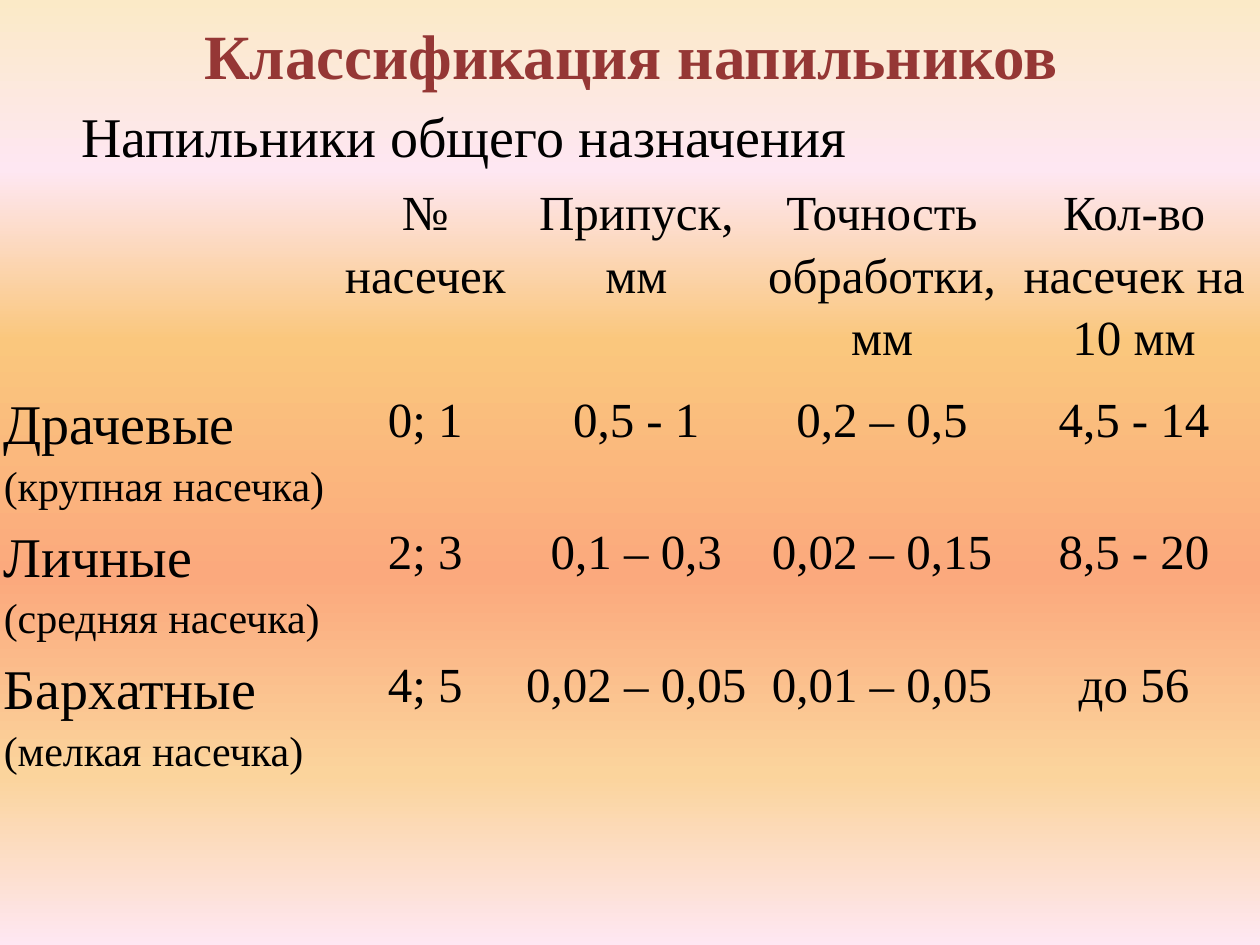
from dataclasses import dataclass

import pptx
import pptx.dml.color
import pptx.enum.text
import pptx.oxml
import pptx.oxml.ns
import pptx.util

Inches = pptx.util.Inches
ALIGN = pptx.enum.text.PP_ALIGN
ANCHOR = pptx.enum.text.MSO_ANCHOR


@dataclass(frozen=True)
class Theme:
    font: str = "Times New Roman"
    title_color: str = "953735"
    text_color: str = "000000"
    title_size: int = 36
    heading_size: int = 32
    body_size: int = 28
    note_size: int = 24
    line_spacing: float = 1.15
    # Background stops: position in percent, colour
    background: tuple = (
        (0, "FBEAC7"), (18, "FEE7F2"), (36, "FAC77D"),
        (61, "FBA97D"), (82, "FBD49C"), (100, "FEE7F2"),
    )


@dataclass(frozen=True)
class FileClass:
    name: str
    note: str
    values: tuple[str, ...]


THEME = Theme()
COLUMN_WIDTHS = (2.65, 1.45, 1.9, 2, 2)
HEADER_HEIGHT, ROW_HEIGHT = 1.64, 1.05
CELL_INSET = 0.03
NO_STYLE_NO_GRID = "{2D5ABB26-0587-4C30-8999-92F81FD0307C}"

# Each header is a tuple of paragraphs
HEADERS = (
    ("№ насечек",),
    ("Припуск,", "мм"),
    ("Точность обработки, мм",),
    ("Кол-во насечек на 10 мм",),
)
FILE_CLASSES = (
    FileClass("Драчевые", "(крупная насечка)",
              ("0; 1", "0,5 - 1", "0,2 – 0,5", "4,5 - 14")),
    FileClass("Личные", "(средняя насечка)",
              ("2; 3", "0,1 – 0,3", "0,02 – 0,15", "8,5 - 20")),
    FileClass("Бархатные", "(мелкая насечка)",
              ("4; 5", "0,02 – 0,05", "0,01 – 0,05", "до 56")),
)


def write_lines(tf, lines: tuple[tuple[str, int], ...], align=ALIGN.CENTER,
                color: str = THEME.text_color, bold: bool = False,
                spacing: float = 1.0) -> None:
    """Write one paragraph for each (text, size) pair."""
    for i, (text, size) in enumerate(lines):
        p = tf.paragraphs[0] if i == 0 else tf.add_paragraph()
        p.alignment = align
        p.line_spacing = spacing
        r = p.add_run()
        r.text = text
        r.font.name = THEME.font
        r.font.size = pptx.util.Pt(size)
        r.font.bold = bold
        r.font.color.rgb = pptx.dml.color.RGBColor.from_string(color)


def paint_background(s) -> None:
    fill = s.background.fill
    fill.gradient()
    fill.gradient_angle = 270
    stops = s.element.xpath(".//p:bg//a:gsLst")[0]
    for stop in list(stops):
        stops.remove(stop)
    for percent, color in THEME.background:
        stops.append(pptx.oxml.parse_xml(
            f'<a:gs {pptx.oxml.ns.nsdecls("a")} pos="{percent * 1000}">'
            f'<a:srgbClr val="{color}"/></a:gs>'))


def add_title(s, text: str) -> None:
    sp = s.shapes.title
    sp.left, sp.top = Inches(0.51), Inches(0.13)
    sp.width, sp.height = Inches(9), Inches(1.09)
    tf = sp.text_frame
    tf.vertical_anchor = ANCHOR.TOP
    tf.margin_top = 0
    write_lines(tf, ((text, THEME.title_size),),
                color=THEME.title_color, bold=True)


def add_subtitle(s, text: str) -> None:
    sp = s.shapes.add_textbox(Inches(0.43), Inches(0.76),
                              Inches(6.51), Inches(0.64))
    tf = sp.text_frame
    tf.word_wrap = False
    tf.auto_size = pptx.enum.text.MSO_AUTO_SIZE.SHAPE_TO_FIT_TEXT
    write_lines(tf, ((text, THEME.heading_size),))


def fill_cell(cell, lines: tuple[tuple[str, int], ...],
              align=ALIGN.CENTER) -> None:
    cell.fill.background()
    cell.margin_left = cell.margin_right = Inches(CELL_INSET)
    cell.margin_top = cell.margin_bottom = Inches(CELL_INSET)
    write_lines(cell.text_frame, lines, align, spacing=THEME.line_spacing)


def add_file_table(s) -> None:
    heights = [HEADER_HEIGHT] + [ROW_HEIGHT] * len(FILE_CLASSES)
    frame = s.shapes.add_table(len(heights), len(COLUMN_WIDTHS), 0,
                               Inches(1.39), Inches(sum(COLUMN_WIDTHS)),
                               Inches(sum(heights)))
    table = frame.table
    table.first_row = table.horz_banding = False
    frame.element.xpath(".//a:tableStyleId")[0].text = NO_STYLE_NO_GRID
    for column, width in zip(table.columns, COLUMN_WIDTHS):
        column.width = Inches(width)
    for row, height in zip(table.rows, heights):
        row.height = Inches(height)

    # Header row, with an empty corner
    fill_cell(table.cell(0, 0), ())
    for col, header in enumerate(HEADERS, 1):
        fill_cell(table.cell(0, col),
                  tuple((line, THEME.body_size) for line in header))

    # One row for each class of file
    for row, item in enumerate(FILE_CLASSES, 1):
        fill_cell(table.cell(row, 0),
                  ((item.name, THEME.heading_size),
                   (item.note, THEME.note_size)), ALIGN.LEFT)
        for col, value in enumerate(item.values, 1):
            fill_cell(table.cell(row, col), ((value, THEME.body_size),))


def main() -> None:
    prs = pptx.Presentation()
    prs.slide_width, prs.slide_height = Inches(10), Inches(7.5)
    s = prs.slides.add_slide(prs.slide_layouts[5])
    paint_background(s)
    add_title(s, "Классификация напильников")
    add_file_table(s)
    add_subtitle(s, "Напильники общего назначения")
    prs.save("out.pptx")


if __name__ == "__main__":
    main()
